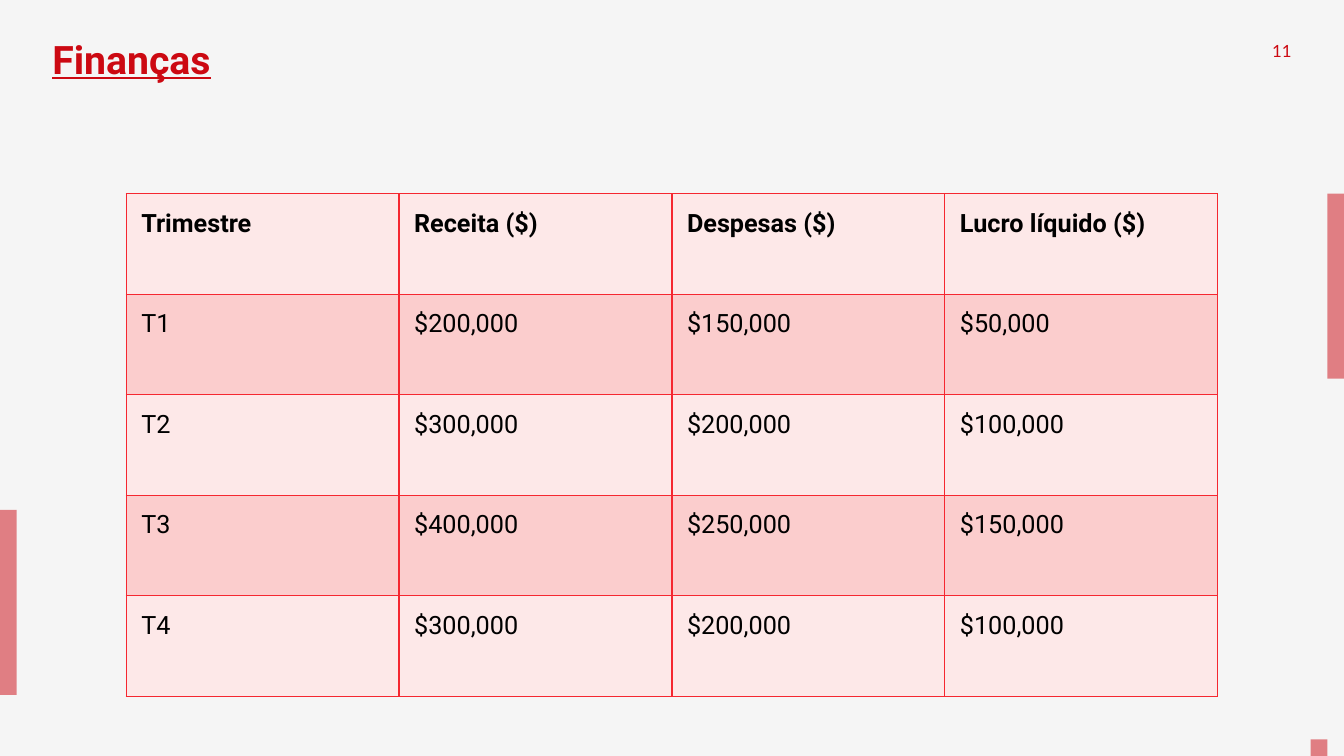
import lxml.etree
import pptx
import pptx.dml.color
import pptx.enum.shapes
import pptx.enum.text
import pptx.oxml
import pptx.oxml.ns
import pptx.util

Cm = pptx.util.Cm
Pt = pptx.util.Pt
qn = pptx.oxml.ns.qn

COLORS = {
    "background": "F5F5F5",
    "accent": "CC0912",
    "border": "F52730",
    "light_row": "FDE8E8",
    "dark_row": "FBCDCD",
    "text": "000000",
}

SLIDE_WIDTH, SLIDE_HEIGHT = 33.87, 19.05
BAR_WIDTH, BAR_HEIGHT = 0.42, 4.66

# Boxes are left, top, width, height in centimetres
BARS = [
    (SLIDE_WIDTH - BAR_WIDTH, 4.88, BAR_WIDTH, BAR_HEIGHT),
    (0, 12.85, BAR_WIDTH, BAR_HEIGHT),
    (SLIDE_WIDTH - 2 * BAR_WIDTH, SLIDE_HEIGHT - BAR_WIDTH, BAR_WIDTH, BAR_WIDTH),
]
TITLE_BOX = (1.07, 0.89, 13.92, 3.1)
NUMBER_BOX = (31.5, 0.89, 1.3, 1.02)
TABLE_BOX = (3.18, 4.88, 27.51, 12.67)

TITLE_FONT = {"name": "Roboto", "size": Pt(28), "bold": True, "underline": True}
NUMBER_FONT = {"name": "Lato", "size": Pt(12)}
CELL_FONT = {"name": "Roboto", "size": Pt(18)}

FINANCES = [
    ("Trimestre", "Receita ($)", "Despesas ($)", "Lucro líquido ($)"),
    ("T1", "$200,000", "$150,000", "$50,000"),
    ("T2", "$300,000", "$200,000", "$100,000"),
    ("T3", "$400,000", "$250,000", "$150,000"),
    ("T4", "$300,000", "$200,000", "$100,000"),
]


def rgb(name):
    return pptx.dml.color.RGBColor.from_string(COLORS[name])


def set_attributes(target, values):
    for name, value in values.items():
        setattr(target, name, value)


def paint(fill, color):
    fill.solid()
    fill.fore_color.rgb = rgb(color)


def write(para, text, font, color):
    span = para.add_run()
    span.text = text
    set_attributes(span.font, font)
    span.font.color.rgb = rgb(color)


def add_bar(page, box):
    bar = page.shapes.add_shape(
        pptx.enum.shapes.MSO_SHAPE.RECTANGLE, *map(Cm, box))
    bar.shadow.inherit = False
    bar.line.fill.background()
    paint(bar.fill, "accent")
    # Half transparent fill
    tint = bar.fill._xPr.find(qn("a:solidFill"))[0]
    lxml.etree.SubElement(tint, qn("a:alpha"), val="50000")


def add_text(page, box, text, font, margin_bottom, para_format):
    frame = page.shapes.add_textbox(*map(Cm, box)).text_frame
    set_attributes(frame, {
        "word_wrap": True,
        "margin_left": Cm(0.25), "margin_right": Cm(0.25),
        "margin_top": Cm(0.13), "margin_bottom": Cm(margin_bottom),
    })
    para = frame.paragraphs[0]
    set_attributes(para, para_format)
    write(para, text, font, "accent")


def add_borders(cell):
    properties = cell._tc.get_or_add_tcPr()
    for index, side in enumerate(("lnL", "lnR", "lnT", "lnB")):
        line = properties.makeelement(qn("a:" + side), {"w": str(Pt(1))})
        fill = lxml.etree.SubElement(line, qn("a:solidFill"))
        lxml.etree.SubElement(fill, qn("a:srgbClr"), val=COLORS["border"])
        properties.insert(index, line)


def add_finance_table(page, box):
    left, top, width, height = box
    row_count, column_count = len(FINANCES), len(FINANCES[0])
    table = page.shapes.add_table(
        row_count, column_count, *map(Cm, box)).table
    for column in table.columns:
        column.width = Cm(width / column_count)
    for row in table.rows:
        row.height = Cm(height / row_count)
    for row_index, values in enumerate(FINANCES):
        for column_index, value in enumerate(values):
            cell = table.cell(row_index, column_index)
            set_attributes(cell, {
                "margin_" + side: Cm(0.38)
                for side in ("left", "right", "top", "bottom")})
            paint(cell.fill, "dark_row" if row_index % 2 else "light_row")
            add_borders(cell)
            write(cell.text_frame.paragraphs[0], value,
                  {**CELL_FONT, "bold": row_index == 0}, "text")


def build_finance_slide(deck):
    page = deck.slides.add_slide(deck.slide_layouts[6])
    paint(page.background.fill, "background")
    # Edge decoration
    for box in BARS:
        add_bar(page, box)
    # Heading and page number
    add_text(page, TITLE_BOX, "Finanças", TITLE_FONT, 0.13,
             {"line_spacing": 0.9})
    add_text(page, NUMBER_BOX, "11", NUMBER_FONT, 0,
             {"alignment": pptx.enum.text.PP_ALIGN.RIGHT})
    # Quarterly figures
    add_finance_table(page, TABLE_BOX)


def main():
    deck = pptx.Presentation()
    deck.slide_width, deck.slide_height = Cm(SLIDE_WIDTH), Cm(SLIDE_HEIGHT)
    build_finance_slide(deck)
    deck.save("out.pptx")


if __name__ == "__main__":
    main()
